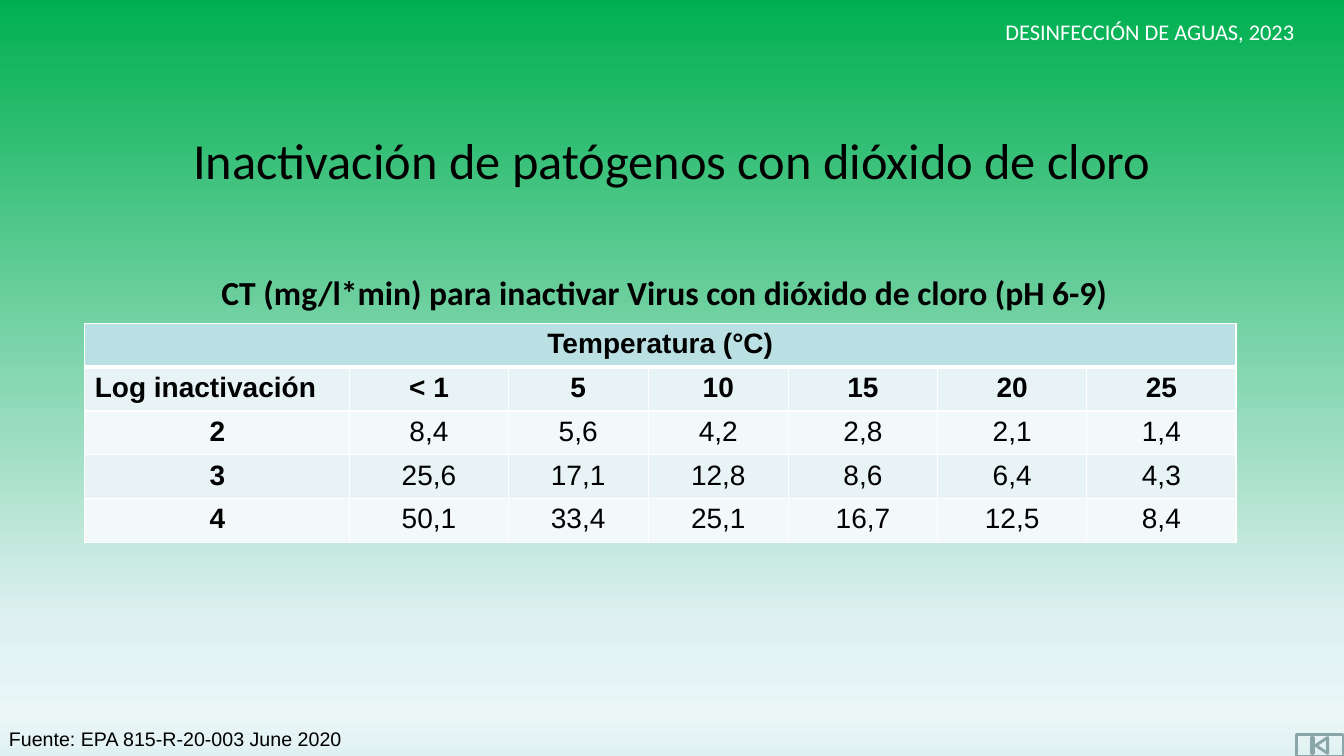
from lxml import etree
from pptx import Presentation
from pptx.dml.color import RGBColor
from pptx.enum.shapes import MSO_SHAPE
from pptx.enum.text import MSO_ANCHOR, PP_ALIGN
from pptx.oxml.ns import qn
from pptx.util import Inches, Pt

LEFT, CENTER = PP_ALIGN.LEFT, PP_ALIGN.CENTER
TOP = MSO_ANCHOR.TOP
BUTTON = MSO_SHAPE.ACTION_BUTTON_BEGINNING

BLACK = RGBColor(0x00, 0x00, 0x00)
WHITE = RGBColor(0xFF, 0xFF, 0xFF)
GREEN = RGBColor(0x00, 0xB0, 0x50)
MIST = RGBColor(0xE0, 0xF1, 0xF2)
PALE = RGBColor(0xEB, 0xF6, 0xF7)
GRAY = RGBColor(0x8A, 0xA6, 0xA8)
HEADER_FILL = RGBColor(0xBB, 0xE0, 0xE3)
BAND_FILLS = (RGBColor(0xE7, 0xF3, 0xF4), RGBColor(0xF3, 0xF9, 0xFA))

BACKGROUND_STOPS = ((0, GREEN), (83, MIST), (95, PALE), (100, MIST))
COLUMN_WIDTHS = (2.63, 1.57, 1.39, 1.39, 1.48, 1.48, 1.48)
CT_ROWS = (
    ("Log inactivación", "< 1", "5", "10", "15", "20", "25"),
    ("2", "8,4", "5,6", "4,2", "2,8", "2,1", "1,4"),
    ("3", "25,6", "17,1", "12,8", "8,6", "6,4", "4,3"),
    ("4", "50,1", "33,4", "25,1", "16,7", "12,5", "8,4"),
)


def add_color(parent, color):
    etree.SubElement(parent, qn("a:srgbClr"), val=str(color))


def set_background(page):
    fill = page.background.fill
    fill.gradient()
    fill.gradient_angle = 270  # counter-clockwise: runs from top to bottom
    stops = page.element.find(".//" + qn("a:gsLst"))
    for stop in list(stops):
        stops.remove(stop)
    for percent, color in BACKGROUND_STOPS:
        stop = etree.SubElement(stops, qn("a:gs"), pos=str(percent * 1000))
        add_color(stop, color)


def style_paragraph(para, size, font, color, bold=False, align=CENTER):
    para.alignment = align
    para.font.size = Pt(size)
    para.font.name = font
    para.font.color.rgb = color
    para.font.bold = bold


def add_text(page, text, left, top, width, height, size, font="Calibri",
             color=BLACK, bold=False, align=CENTER, spacing=0):
    box = page.shapes.add_textbox(Inches(left), Inches(top), Inches(width), Inches(height))
    frame = box.text_frame
    frame.word_wrap = True
    frame.vertical_anchor = TOP
    para = frame.paragraphs[0]
    para.text = text
    para.space_before = para.space_after = Pt(spacing)
    style_paragraph(para, size, font, color, bold, align)


def set_borders(cell, bottom_width=1, top_width=1):
    properties = cell._tc.get_or_add_tcPr()
    widths = {"a:lnL": 1, "a:lnR": 1, "a:lnT": top_width, "a:lnB": bottom_width}
    for index, (side, width) in enumerate(widths.items()):
        line = etree.Element(qn(side), w=str(Pt(width)))
        add_color(etree.SubElement(line, qn("a:solidFill")), WHITE)
        properties.insert(index, line)


def fill_cell(cell, text, fill, bold, align=CENTER):
    cell.fill.solid()
    cell.fill.fore_color.rgb = fill
    para = cell.text_frame.paragraphs[0]
    para.text = text
    style_paragraph(para, 20, "Arial", BLACK, bold, align)


def add_ct_table(page):
    table = page.shapes.add_table(
        len(CT_ROWS) + 1, len(COLUMN_WIDTHS),
        Inches(0.84), Inches(3.21), Inches(11.42), Inches(2.17)).table
    for column, width in zip(table.columns, COLUMN_WIDTHS):
        column.width = Inches(width)

    # Merged heading
    heading = table.cell(0, 0)
    heading.merge(table.cell(0, len(COLUMN_WIDTHS) - 1))
    fill_cell(heading, "Temperatura (°C)", HEADER_FILL, True)
    for column in range(len(COLUMN_WIDTHS)):
        set_borders(table.cell(0, column), bottom_width=3)

    # Temperatures and CT values
    for row, values in enumerate(CT_ROWS):
        for column, value in enumerate(values):
            cell = table.cell(row + 1, column)
            align = LEFT if row == column == 0 else CENTER
            fill_cell(cell, value, BAND_FILLS[row % 2], row == 0 or column == 0, align)
            set_borders(cell, top_width=3 if row == 0 else 1)


def add_start_button(page):
    button = page.shapes.add_shape(
        BUTTON, Inches(12.86), Inches(7.29), Inches(0.46), Inches(0.21))
    button.shadow.inherit = False
    button.fill.background()
    button.line.color.rgb = GRAY
    button.line.width = Pt(2)


def main():
    deck = Presentation()
    deck.slide_width, deck.slide_height = Inches(13.33), Inches(7.5)
    page = deck.slides.add_slide(deck.slide_layouts[6])
    set_background(page)

    # Course header and navigation
    add_start_button(page)
    add_text(page, "DESINFECCIÓN DE AGUAS, 2023", 9.82, 0.13, 3.17, 0.37, 16, color=WHITE)

    # Title, table and its caption
    add_text(page, "Inactivación de patógenos con dióxido de cloro",
             0, 1.23, 13.33, 0.71, 36, spacing=6)
    add_ct_table(page)
    add_text(page, "CT (mg/l*min) para inactivar Virus con dióxido de cloro (pH 6-9)",
             0.88, 2.65, 11.42, 0.5, 24, bold=True)

    # Source
    add_text(page, "Fuente: EPA 815-R-20-003 June 2020",
             -0.01, 7.16, 6.67, 0.34, 14, font="Arial", align=LEFT)

    deck.save("out.pptx")


if __name__ == "__main__":
    main()
